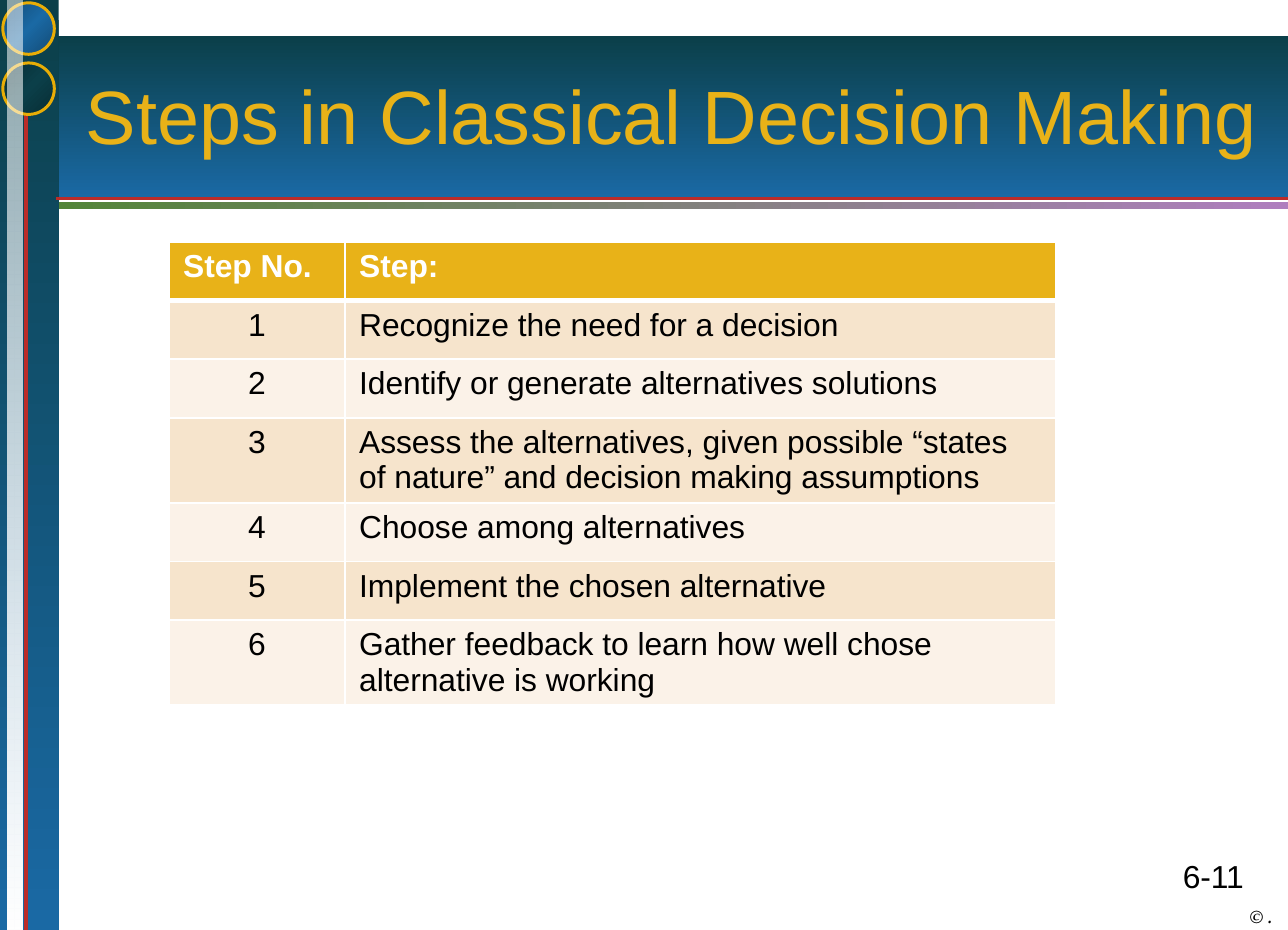
from lxml import etree
from pptx import Presentation
from pptx.dml.color import RGBColor
from pptx.enum.shapes import MSO_CONNECTOR, MSO_SHAPE
from pptx.enum.text import MSO_ANCHOR, PP_ALIGN
from pptx.oxml import parse_xml
from pptx.oxml.ns import nsdecls, qn
from pptx.util import Pt

PX = 9144  # 100 px to the inch
RECTANGLE, OVAL = MSO_SHAPE.RECTANGLE, MSO_SHAPE.OVAL
STRAIGHT = MSO_CONNECTOR.STRAIGHT
LEFT, CENTER, RIGHT = PP_ALIGN.LEFT, PP_ALIGN.CENTER, PP_ALIGN.RIGHT
MIDDLE, BOTTOM = MSO_ANCHOR.MIDDLE, MSO_ANCHOR.BOTTOM

color = RGBColor.from_string
GOLD, RED, WHITE, BLACK = "E8B218", "BB2C29", "FFFFFF", "000000"
TEAL_TO_BLUE = [(0, "0B3F49", 100), (100, "1A69A4", 100)]
GREEN_TO_PURPLE = [(0, "538438", 100), (100, "AF7EBE", 100)]
BLUE_DISC = [(0, "134B75", 100), (50, "1A69A4", 100), (100, "134B75", 100)]
TEAL_DISC = [(0, "082D34", 100), (50, "0B3F49", 100), (100, "082D34", 100)]
WHITE_FADE = [(0, WHITE, 52), (100, WHITE, 100)]

STEPS = [
    "Recognize the need for a decision",
    "Identify or generate alternatives solutions",
    "Assess the alternatives, given possible “states of nature” and decision making assumptions",
    "Choose among alternatives",
    "Implement the chosen alternative",
    "Gather feedback to learn how well chose alternative is working",
]


def add_gradient_shape(kind, left, top, width, height, stops, angle):
    """Stops are (position %, color, opacity %); the angle runs clockwise."""
    shape = slide.shapes.add_shape(kind, left * PX, top * PX, width * PX, height * PX)
    shape.shadow.inherit = False
    shape.line.fill.background()
    shape.fill.gradient()
    shape.fill.gradient_angle = (360 - angle) % 360
    stop_list = shape._element.spPr.find(qn("a:gradFill")).find(qn("a:gsLst"))
    stop_list.clear()
    for position, value, opacity in stops:
        stop = etree.SubElement(stop_list, qn("a:gs"), pos=str(position * 1000))
        tint = etree.SubElement(stop, qn("a:srgbClr"), val=value)
        etree.SubElement(tint, qn("a:alpha"), val=str(opacity * 1000))
    return shape


def style_paragraph(para, size, value, align, font="Arial", bold=False, italic=False):
    para.alignment = align
    for span in para.runs:
        span.font.name = font
        span.font.size = Pt(size)
        span.font.color.rgb = color(value)
        span.font.bold = bold
        span.font.italic = italic


deck = Presentation()
deck.slide_width, deck.slide_height = 900 * PX, 650 * PX
slide = deck.slides.add_slide(deck.slide_layouts[5])

# Title banner, side bar and accent rules
add_gradient_shape(RECTANGLE, 0, 25, 900, 113, TEAL_TO_BLUE, 90)
add_gradient_shape(RECTANGLE, 39, 141, 861, 5, GREEN_TO_PURPLE, 0)
add_gradient_shape(RECTANGLE, 0, 0, 41, 650, TEAL_TO_BLUE, 90)
for x1, y1, x2, y2, weight in [(39, 139, 900, 139, 1.5), (18, 79, 18, 650, 2.25)]:
    rule = slide.shapes.add_connector(STRAIGHT, x1 * PX, y1 * PX, x2 * PX, y2 * PX)
    rule.line.color.rgb = color(RED)
    rule.line.width = Pt(weight)
    etree.SubElement(rule._element.spPr, qn("a:effectLst"))
for top, stops in [(44, TEAL_DISC), (2, BLUE_DISC)]:
    disc = add_gradient_shape(OVAL, 2, top, 36, 36, stops, 45)
    disc.line.color.rgb = color("E8AD06")
    disc.line.width = Pt(1.5)
add_gradient_shape(RECTANGLE, 5, 0, 11, 650, WHITE_FADE, 90)

# Page number and copyright mark
box = slide.shapes.add_textbox(800 * PX, 594 * PX, 79 * PX, 37 * PX)
box.text_frame.word_wrap = True
box.text_frame.text = "6-11"
style_paragraph(box.text_frame.paragraphs[0], 16, BLACK, RIGHT)

box = slide.shapes.add_textbox(873 * PX, 633 * PX, 16 * PX, 15 * PX)
frame = box.text_frame
frame.margin_left = frame.margin_right = frame.margin_top = frame.margin_bottom = 0
frame.word_wrap = False
frame.vertical_anchor = BOTTOM
frame.text = "© ."
style_paragraph(frame.paragraphs[0], 9, BLACK, RIGHT, "TeX Gyre Pagella", True, True)

# Title, brought in front of the banner
title = slide.shapes.title
title.left, title.top, title.width, title.height = 39 * PX, 26 * PX, 861 * PX, 108 * PX
frame = title.text_frame
frame.margin_left = frame.margin_right = 9 * PX
frame.margin_top = frame.margin_bottom = 4 * PX
frame.word_wrap = True
frame.vertical_anchor = MIDDLE
frame.text = "Steps in Classical Decision Making"
style_paragraph(frame.paragraphs[0], 38, GOLD, CENTER)
shadow = parse_xml(
    f'<a:effectLst {nsdecls("a")}><a:outerShdw dist="38100" dir="2700000">'
    f'<a:srgbClr val="{BLACK}"/></a:outerShdw></a:effectLst>'
)
frame.paragraphs[0].runs[0].font._element.find(qn("a:solidFill")).addnext(shadow)
slide.shapes._spTree.append(title._element)

# Table of steps
rows = [("Step No.", "Step:")] + [(str(n), step) for n, step in enumerate(STEPS, 1)]
row_height = 41
table = slide.shapes.add_table(
    len(rows), 2, 118 * PX, 169 * PX, 620 * PX, len(rows) * row_height * PX
).table
for column, width in zip(table.columns, (123, 497)):
    column.width = width * PX
for r, row in enumerate(rows):
    table.rows[r].height = row_height * PX
    header = r == 0
    band = GOLD if header else ("FBF2E8", "F6E4CC")[r % 2]
    for c, text in enumerate(row):
        cell = table.cell(r, c)
        cell.text = text
        cell.fill.solid()
        cell.fill.fore_color.rgb = color(band)
        align = CENTER if c == 0 and not header else LEFT
        style_paragraph(cell.text_frame.paragraphs[0], 16, WHITE if header else BLACK, align, bold=header)
        for i, side in enumerate("LRTB"):
            under_header = (r, side) in [(0, "B"), (1, "T")]
            border = parse_xml(
                f'<a:ln{side} {nsdecls("a")} w="{Pt(3 if under_header else 1)}">'
                f'<a:solidFill><a:srgbClr val="{WHITE}"/></a:solidFill></a:ln{side}>'
            )
            cell._tc.get_or_add_tcPr().insert(i, border)

deck.save("out.pptx")
